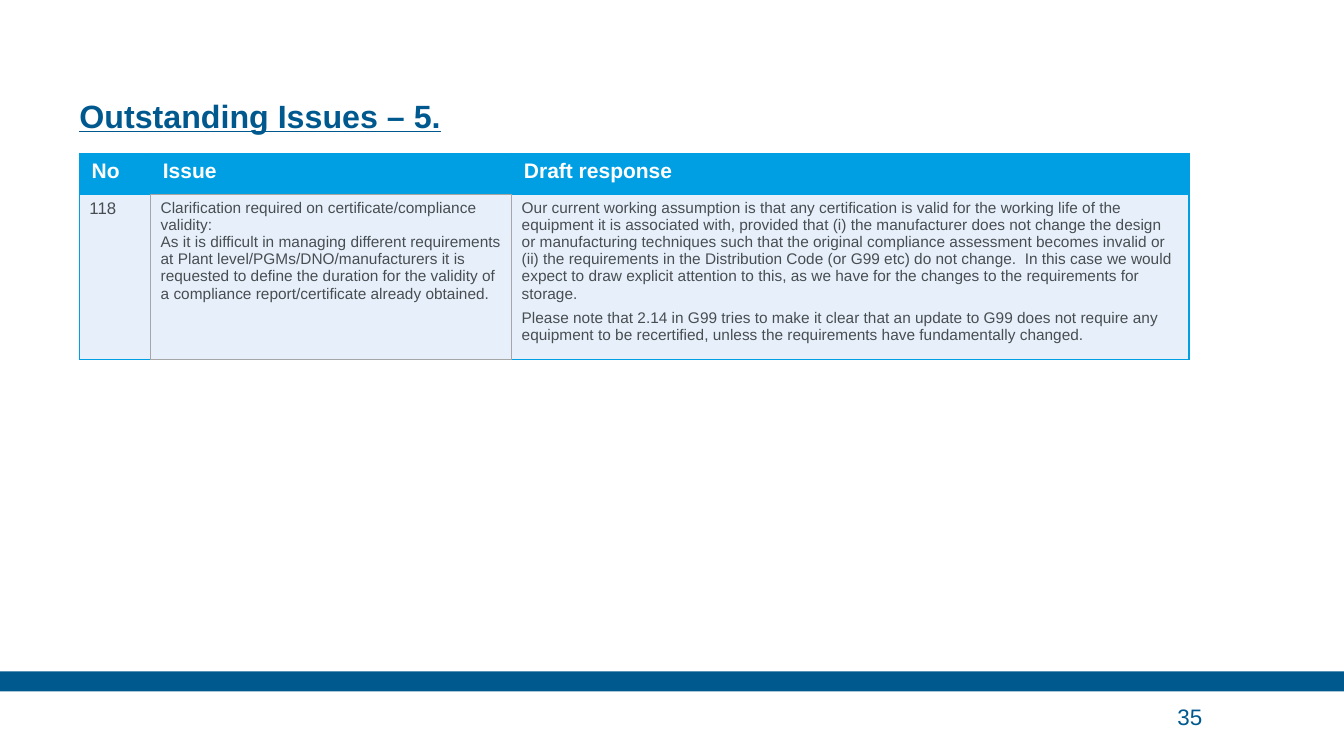
from lxml.etree import SubElement
from pptx import Presentation
from pptx.dml.color import RGBColor
from pptx.enum.shapes import MSO_SHAPE
from pptx.enum.text import MSO_ANCHOR, PP_ALIGN
from pptx.oxml.ns import qn
from pptx.util import Pt

COLORS = {"navy": "00598E", "sky": "009FE3", "pale": "E7F0FA",
          "grey": "A6A6A6", "ink": "484D51", "white": "FFFFFF"}
HEADINGS = ["No", "Issue", "Draft response"]
ISSUE = [
    ["118"],
    ["Clarification required on certificate/compliance validity:",
     "As it is difficult in managing different requirements at Plant level/PGMs/DNO/manufacturers "
     "it is requested to define the duration for the validity of a compliance report/certificate "
     "already obtained."],
    ["Our current working assumption is that any certification is valid for the working life of the "
     "equipment it is associated with, provided that (i) the manufacturer does not change the design "
     "or manufacturing techniques such that the original compliance assessment becomes invalid or "
     "(ii) the requirements in the Distribution Code (or G99 etc) do not change.  In this case we "
     "would expect to draw explicit attention to this, as we have for the changes to the "
     "requirements for storage.",
     "Please note that 2.14 in G99 tries to make it clear that an update to G99 does not require any "
     "equipment to be recertified, unless the requirements have fundamentally changed."],
]
BODY_SIZES = [12, 11, 11]
BODY_GAPS = [0, 0, 5]
COLUMN_WIDTHS = [50.9, 257.9, 483.9]
ROW_HEIGHTS = [29.5, 110]


def rgb(name):
    """Return the named colour."""
    return RGBColor.from_string(COLORS[name])


def add_span(para, text, size, color, bold=False):
    """Add one formatted run to a paragraph."""
    span = para.add_run()
    span.text = text
    span.font.name = "Arial"
    span.font.size = Pt(size)
    span.font.bold = bold
    span.font.color.rgb = rgb(color)
    return span


def prepare_frame(frame, anchor):
    """Clear the insets of a text frame and set its wrapping and anchor."""
    frame.margin_left = frame.margin_right = frame.margin_top = frame.margin_bottom = 0
    frame.word_wrap = True
    frame.vertical_anchor = anchor


def fill_title(title, left, top, width, height):
    """Place the title placeholder and write the heading."""
    title.left, title.top, title.width, title.height = Pt(left), Pt(top), Pt(width), Pt(height)
    prepare_frame(title.text_frame, MSO_ANCHOR.BOTTOM)
    para = title.text_frame.paragraphs[0]
    para.alignment = PP_ALIGN.LEFT
    para.line_spacing = Pt(30)
    add_span(para, "Outstanding Issues – 5.", 23, "navy", True).font.underline = True


def set_borders(cell, **sides):
    """Draw one-point borders on the given sides of a cell."""
    properties = cell._tc.get_or_add_tcPr()
    for position, side in enumerate(side for side in ("L", "R", "T", "B") if side in sides):
        line = SubElement(properties, qn(f"a:ln{side}"), w=str(Pt(1)))
        fill = SubElement(line, qn("a:solidFill"))
        SubElement(fill, qn("a:srgbClr"), val=COLORS[sides[side]])
        properties.insert(position, line)


def fill_cell(cell, texts, size, color, background, bold=False, gap=0):
    """Fill a cell and write its paragraphs."""
    cell.fill.solid()
    cell.fill.fore_color.rgb = rgb(background)
    frame = cell.text_frame
    for index, text in enumerate(texts):
        para = frame.add_paragraph() if index else frame.paragraphs[0]
        para.space_after = Pt(gap)
        add_span(para, text, size, color, bold)


def add_issue_table(page, left, top):
    """Add the table of issues and draft responses."""
    box = page.shapes.add_table(2, 3, Pt(left), Pt(top), Pt(sum(COLUMN_WIDTHS)), Pt(sum(ROW_HEIGHTS)))
    table = box.table
    for row, height in zip(table.rows, ROW_HEIGHTS):
        row.height = Pt(height)
    for index, width in enumerate(COLUMN_WIDTHS):
        table.columns[index].width = Pt(width)
        head, body = table.cell(0, index), table.cell(1, index)
        head.margin_left = head.margin_right = Pt(8.8)
        head.margin_top = head.margin_bottom = Pt(4.4)
        fill_cell(head, [HEADINGS[index]], 15, "white", "sky", True)
        fill_cell(body, ISSUE[index], BODY_SIZES[index], "ink", "pale", gap=BODY_GAPS[index])
        edge = "grey" if index == 1 else "sky"
        set_borders(head, L="sky", R="sky", T="sky", B=edge)
        set_borders(body, L="sky" if index == 0 else "grey",
                    R="sky" if index == 2 else "grey", T=edge, B=edge)


def add_footer(page, top, width):
    """Add the footer band and the page number below it."""
    band = page.shapes.add_shape(MSO_SHAPE.RECTANGLE, 0, Pt(top), Pt(width), Pt(14.4))
    band.shadow.inherit = False
    band.fill.solid()
    band.fill.fore_color.rgb = rgb("navy")
    band.line.fill.background()
    box = page.shapes.add_textbox(Pt(width - 119), Pt(top + 18), Pt(88.6), Pt(28))
    prepare_frame(box.text_frame, MSO_ANCHOR.MIDDLE)
    add_span(box.text_frame.paragraphs[0], "35", 16, "navy")


def main():
    """Build the deck and save it."""
    deck = Presentation()
    deck.slide_width, deck.slide_height = Pt(960), Pt(540)
    page = deck.slides.add_slide(deck.slide_layouts[5])
    add_footer(page, 479.5, 960)
    fill_title(page.shapes.title, 56.7, 22.7, 708.5, 73.4)
    add_issue_table(page, 56.7, 109.4)
    deck.save("out.pptx")


if __name__ == "__main__":
    main()
